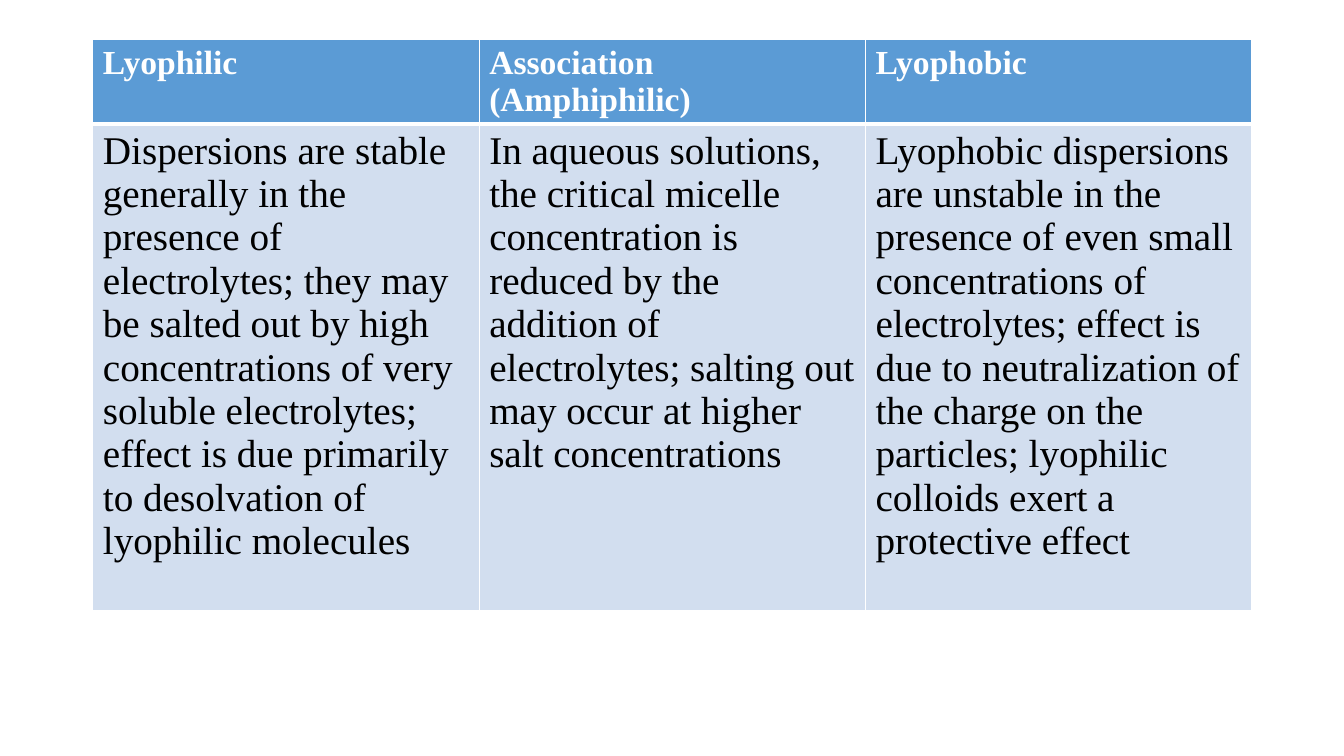
from dataclasses import dataclass

import pptx
import pptx.dml.color
import pptx.oxml
import pptx.oxml.ns
import pptx.util
from pptx.util import Cm


@dataclass
class Theme:
    font: str = "Times New Roman"
    header_fill: str = "5B9BD5"
    header_text: str = "FFFFFF"
    header_size: int = 24
    body_fill: str = "D2DEEF"
    body_text: str = "000000"
    body_size: int = 28
    rule: str = "FFFFFF"
    thin_rule: int = 1
    thick_rule: int = 3


theme = Theme()


def add_border(cell, side, points):
    width = pptx.util.Pt(points)
    border = pptx.oxml.parse_xml(
        f'<a:{side} {pptx.oxml.ns.nsdecls("a")} w="{width}">'
        f'<a:solidFill><a:srgbClr val="{theme.rule}"/></a:solidFill></a:{side}>'
    )
    cell._tc.get_or_add_tcPr().append(border)


def style_cell(cell, text, fill, color, size, bold, top, bottom):
    for side, points in (("lnL", theme.thin_rule), ("lnR", theme.thin_rule),
                         ("lnT", top), ("lnB", bottom)):
        add_border(cell, side, points)
    cell.fill.solid()
    cell.fill.fore_color.rgb = pptx.dml.color.RGBColor.from_string(fill)
    cell.text_frame.text = text
    font = cell.text_frame.paragraphs[0].runs[0].font
    font.name = theme.font
    font.size = pptx.util.Pt(size)
    font.bold = bold
    font.color.rgb = pptx.dml.color.RGBColor.from_string(color)


electrolyte_effects = {
    "Lyophilic": (
        "Dispersions are stable generally in the presence of electrolytes; "
        "they may be salted out by high concentrations of very soluble "
        "electrolytes; effect is due primarily to desolvation of lyophilic "
        "molecules"
    ),
    "Association (Amphiphilic)": (
        "In aqueous solutions, the critical micelle concentration is reduced "
        "by the addition of electrolytes; salting out may occur at higher "
        "salt concentrations"
    ),
    "Lyophobic": (
        "Lyophobic dispersions are unstable in the presence of even small "
        "concentrations of electrolytes; effect is due to neutralization of "
        "the charge on the particles; lyophilic colloids exert a protective "
        "effect"
    ),
}

deck = pptx.Presentation()
deck.slide_width = Cm(33.87)
deck.slide_height = Cm(19.05)
slide = deck.slides.add_slide(deck.slide_layouts[6])

header_height = Cm(2.14)
effect_height = Cm(12.26)
comparison = slide.shapes.add_table(
    2, len(electrolyte_effects), Cm(2.34), Cm(0.99), Cm(29.21),
    header_height + effect_height,
).table
comparison.rows[0].height = header_height
comparison.rows[1].height = effect_height

for column, (colloid, effect) in enumerate(electrolyte_effects.items()):
    style_cell(comparison.cell(0, column), colloid, theme.header_fill,
               theme.header_text, theme.header_size, True,
               theme.thin_rule, theme.thick_rule)
    style_cell(comparison.cell(1, column), effect, theme.body_fill,
               theme.body_text, theme.body_size, False,
               theme.thick_rule, theme.thin_rule)

deck.save("out.pptx")
